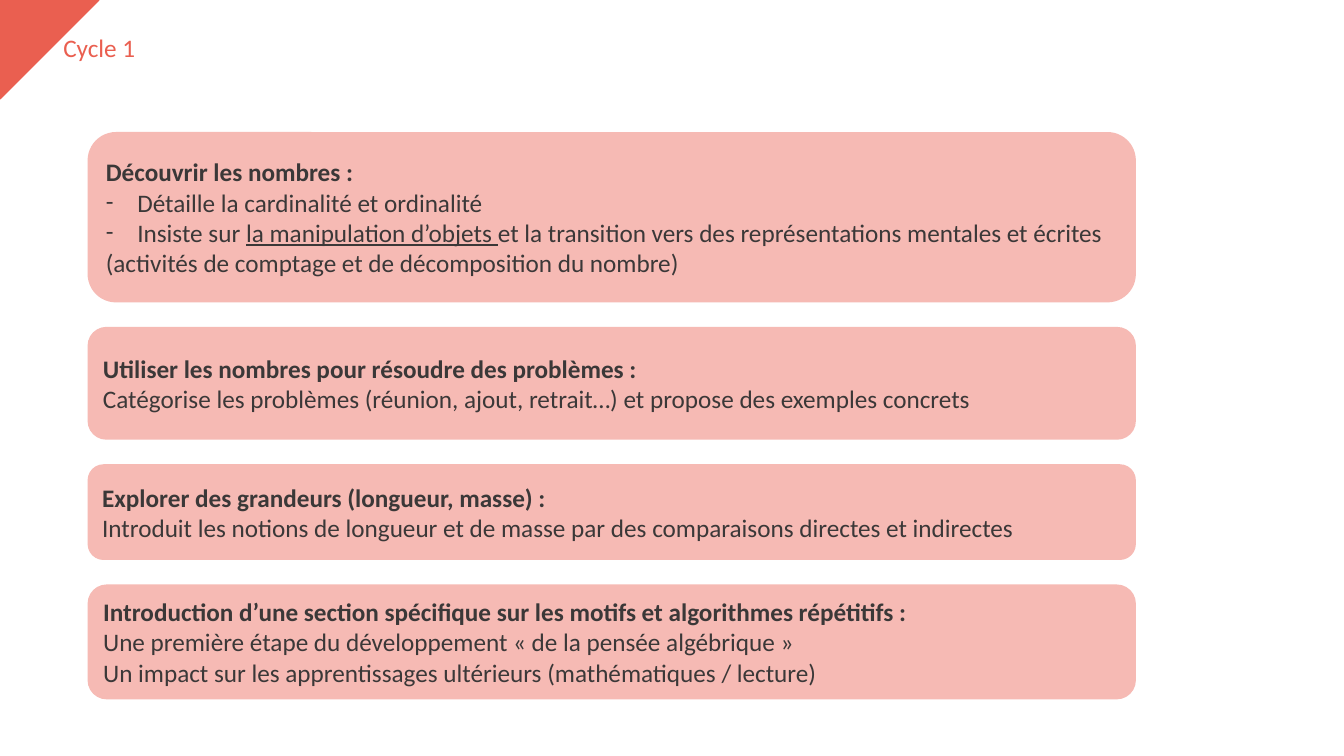
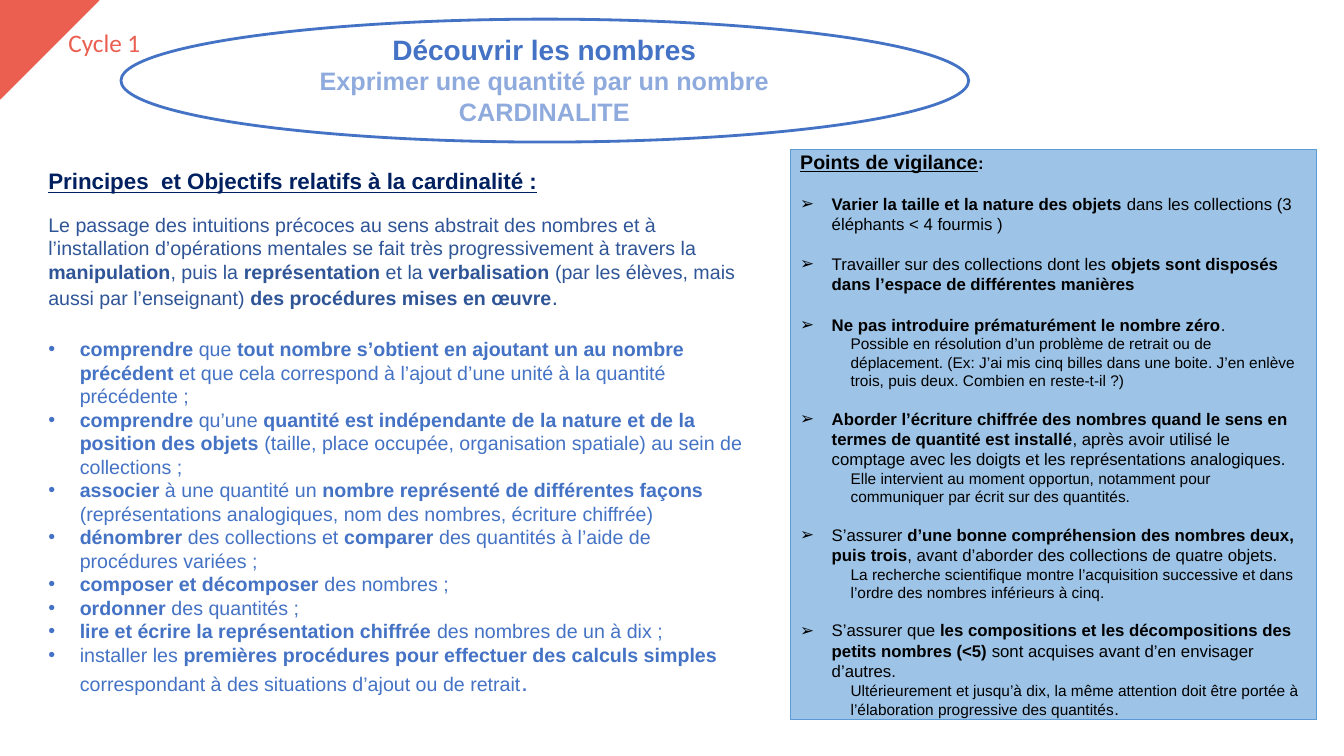
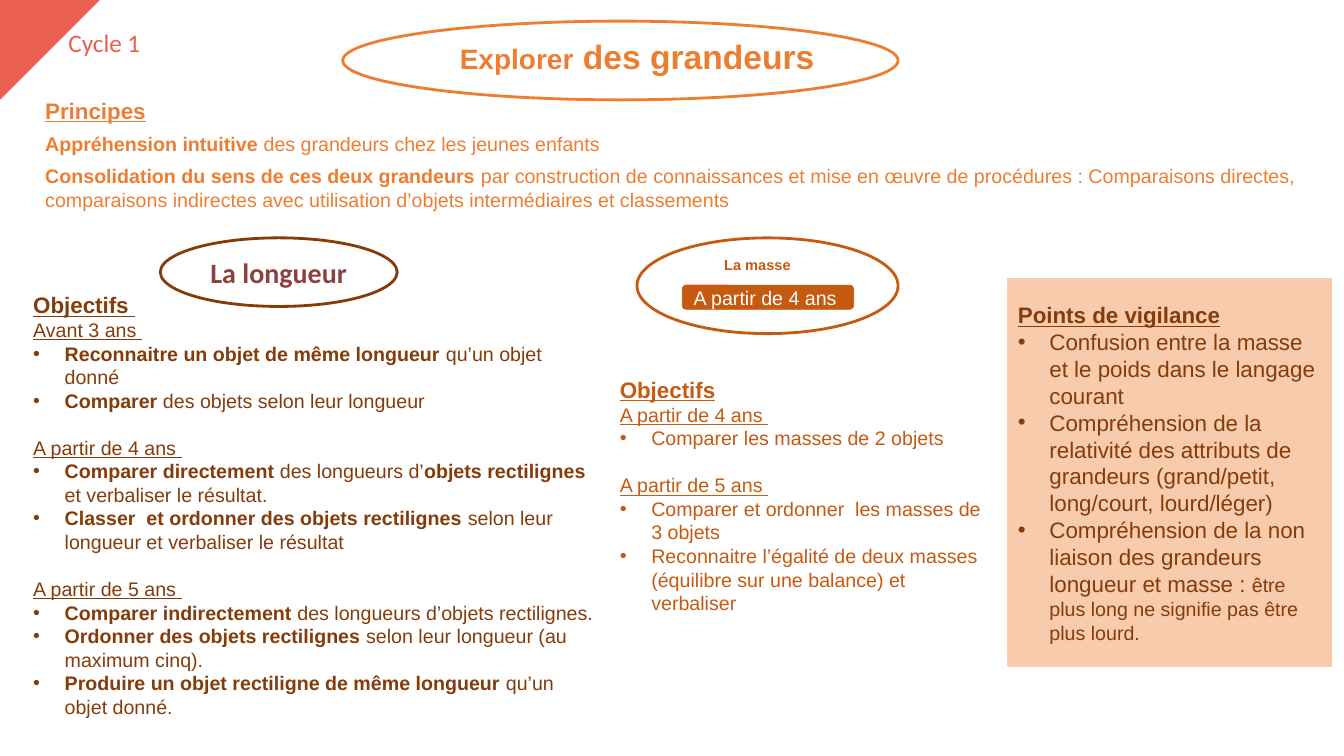
from lxml import etree
from pptx import Presentation
from pptx.dml.color import RGBColor
from pptx.enum.shapes import MSO_SHAPE
from pptx.enum.text import MSO_ANCHOR, MSO_AUTO_SIZE, PP_ALIGN
from pptx.oxml.ns import qn
from pptx.util import Pt

LEFT, CENTER = PP_ALIGN.LEFT, PP_ALIGN.CENTER
TOP, MIDDLE = MSO_ANCHOR.TOP, MSO_ANCHOR.MIDDLE
NO_FIT = MSO_AUTO_SIZE.NONE
RECTANGLE, ROUNDED = MSO_SHAPE.RECTANGLE, MSO_SHAPE.ROUNDED_RECTANGLE
ELLIPSE, TRIANGLE = MSO_SHAPE.OVAL, MSO_SHAPE.RIGHT_TRIANGLE
TITLE_ONLY, BLANK = 5, 6

COLORS = {
    "coral": "EA5F50", "pink": "F6BAB4", "charcoal": "3B3838",
    "navy": "002060", "dark_blue": "2F5597", "blue": "4472C4",
    "pale_blue": "8FAADC", "sky": "9DC3E6", "sky_line": "5B9BD5",
    "orange": "ED7D31", "rust": "C55A11", "brown": "843C0B",
    "wine": "8D413F", "peach": "F8CBAD", "black": "000000", "white": "FFFFFF",
}
BULLET_INDENT = 22.5


def color(name):
    return RGBColor.from_string(COLORS[name])


def add_spans(para, text, font="Arial", size=14, ink="black"):
    """Asterisks switch bold on and off, underscores switch underline."""
    for bold_index, part in enumerate(text.split("*")):
        for line_index, piece in enumerate(part.split("_")):
            if piece:
                span = para.add_run()
                span.text = piece
                span.font.name = font
                span.font.size = Pt(size)
                span.font.bold = bold_index % 2 == 1
                span.font.underline = line_index % 2 == 1
                span.font.color.rgb = color(ink)


def write_para(para, text, font="Arial", size=14, ink="black", align=LEFT, bullet=None,
               indent=0, before=0, after=0, tail="", tail_size=None):
    para.alignment = align
    para.space_before, para.space_after = Pt(before), Pt(after)
    add_spans(para, text, font, size, ink)
    add_spans(para, tail, font, tail_size or size, ink)
    properties = para._p.get_or_add_pPr()
    if bullet:
        properties.set("marL", str(Pt(BULLET_INDENT)))
        properties.set("indent", str(-Pt(BULLET_INDENT)))
        etree.SubElement(properties, qn("a:buFont")).set("typeface", font)
        etree.SubElement(properties, qn("a:buChar")).set("char", bullet)
    elif indent:
        properties.set("marL", str(Pt(indent)))
        properties.set("indent", "0")


def write_text(holder, paras, anchor=TOP, **shared):
    frame = holder.text_frame
    frame.word_wrap = True
    frame.auto_size = NO_FIT
    frame.vertical_anchor = anchor
    for index, (text, own) in enumerate(paras):
        para = frame.add_paragraph() if index else frame.paragraphs[0]
        write_para(para, text, **{**shared, **own})


def add_text(page, box, paras, **shared):
    write_text(page.shapes.add_textbox(*map(Pt, box)), paras, **shared)


def add_title(page, box, paras, **shared):
    title = page.shapes.title
    title.left, title.top, title.width, title.height = map(Pt, box)
    write_text(title, paras, **shared)


def add_panel(page, kind, box, fill=None, line=None, weight=1.0, paras=(), **shared):
    panel = page.shapes.add_shape(kind, *map(Pt, box))
    panel.shadow.inherit = False
    if fill:
        panel.fill.solid()
        panel.fill.fore_color.rgb = color(fill)
    else:
        panel.fill.background()
    if line:
        panel.line.color.rgb = color(line)
        panel.line.width = Pt(weight)
    else:
        panel.line.fill.background()
    write_text(panel, paras, anchor=MIDDLE, **shared)
    return panel


def add_corner(page, left, top, place=add_text):
    add_panel(page, TRIANGLE, (0, 0, 70.6, 70.6), "coral", "coral").rotation = 90
    place(page, (left, top, 78.5, 29), [("Cycle 1", {})],
          font="Calibri", size=18, ink="coral", align=CENTER)


def add_cards(page, left, top, width, gap, cards):
    for height, paras in cards:
        add_panel(page, ROUNDED, (left, top, width, height), "pink", paras=paras,
                  font="Calibri", size=18, ink="charcoal")
        top += height + gap


def build_overview(deck):
    page = deck.slides.add_slide(deck.slide_layouts[TITLE_ONLY])
    dash = {"bullet": "-"}
    add_cards(page, 62.6, 94.3, 748.8, 17.5, [
        (121.7, [
            ("*Découvrir les nombres :*", {}),
            ("Détaille la cardinalité et ordinalité", dash),
            ("Insiste sur _la manipulation d’objets _et la transition vers des "
             "représentations mentales et écrites", dash),
            ("(activités de comptage et de décomposition du nombre)", {}),
        ]),
        (80.6, [
            ("*Utiliser les nombres pour résoudre des problèmes :*", {}),
            ("Catégorise les problèmes (réunion, ajout, retrait…) et propose des "
             "exemples concrets", {}),
        ]),
        (68.4, [
            ("*Explorer des grandeurs (longueur, masse) :*", {}),
            ("Introduit les notions de longueur et de masse par des comparaisons "
             "directes et indirectes", {}),
        ]),
        (82.1, [
            ("*Introduction d’une section spécifique sur les motifs et algorithmes "
             "répétitifs :*", {}),
            ("Une première étape du développement « de la pensée algébrique »", {}),
            ("Un impact sur les apprentissages ultérieurs (mathématiques / lecture)", {}),
        ]),
    ])
    add_corner(page, 31.7, 19.4, add_title)


def add_cardinality_goals(page, left, top, width):
    dot = {"bullet": "•", "ink": "blue"}
    add_text(page, (left, top, width, 29),
             [("*_Principes  et Objectifs relatifs à la cardinalité :_*", {})],
             size=16, ink="navy")
    add_text(page, (left, top + 32.4, width, 353.5), [
        ("Le passage des intuitions précoces au sens abstrait des nombres et à "
         "l’installation d’opérations mentales se fait très progressivement à travers la "
         "*manipulation*, puis la *représentation* et la *verbalisation* (par les élèves, "
         "mais aussi par l’enseignant) *des procédures mises en œuvre*",
         {"tail": ".", "tail_size": 16}),
        ("*comprendre *que *tout nombre s’obtient en ajoutant un au nombre précédent* et "
         "que cela correspond à l’ajout d’une unité à la quantité précédente ;",
         {**dot, "before": 19.2}),
        ("*comprendre* qu’une *quantité est indépendante de la nature et de la position "
         "des objets* (taille, place occupée, organisation spatiale) au sein de "
         "collections ;", dot),
        ("*associer* à une quantité un *nombre représenté de différentes façons "
         "*(représentations analogiques, nom des nombres, écriture chiffrée)", dot),
        ("*dénombrer *des collections et *comparer* des quantités à l’aide de procédures "
         "variées ;", dot),
        ("*composer et décomposer *des nombres ;", dot),
        ("*ordonner *des quantités ;", dot),
        ("*lire et écrire la représentation chiffrée *des nombres de un à dix ;", dot),
        ("installer les *premières procédures pour effectuer des calculs simples "
         "*correspondant à des situations d’ajout ou de retrait",
         {**dot, "tail": ".", "tail_size": 18}),
    ], ink="dark_blue")


def add_cardinality_warnings(page, box):
    arrow = {"bullet": "➢", "before": 14.4}
    later_arrow = {**arrow, "before": 13.2}
    detail = {"indent": 36, "size": 11}
    add_panel(page, RECTANGLE, box, "sky", "sky_line", 0.5, [
        ("*_Points de vigilance_*", {"size": 14, "tail": "*:*", "tail_size": 12}),
        ("*Varier la taille et la nature des objets *dans les collections (3 éléphants "
         "< 4 fourmis )", arrow),
        ("Travailler sur des collections dont les *objets sont disposés dans l’espace de "
         "différentes manières*", arrow),
        ("*Ne pas introduire prématurément le nombre zéro*.", arrow),
        ("Possible en résolution d’un problème de retrait ou de déplacement. (Ex: J’ai "
         "mis cinq billes dans une boite. J’en enlève trois, puis deux. Combien en "
         "reste-t-il ?)", detail),
        ("*Aborder l’écriture chiffrée des nombres quand le sens en termes de quantité "
         "est installé*, après avoir utilisé le comptage avec les doigts et les "
         "représentations analogiques.", later_arrow),
        ("Elle intervient au moment opportun, notamment pour communiquer par écrit sur "
         "des quantités.", detail),
        ("S’assurer *d’une bonne compréhension des nombres deux, puis trois*, avant "
         "d’aborder des collections de quatre objets.", later_arrow),
        ("La recherche scientifique montre l’acquisition successive et dans l’ordre des "
         "nombres inférieurs à cinq.", detail),
        ("S’assurer que *les compositions et les décompositions des petits nombres (<5)* "
         "sont acquises avant d’en envisager d’autres.", later_arrow),
        ("Ultérieurement et jusqu’à dix, la même attention doit être portée à "
         "l’élaboration progressive des quantités",
         {**detail, "tail": ".", "tail_size": 12}),
    ], size=12)


def build_cardinality(deck):
    page = deck.slides.add_slide(deck.slide_layouts[TITLE_ONLY])
    add_title(page, (70.6, 19.4, 636.5, 76.3), [
        ("*Découvrir les nombres*", {"size": 20, "ink": "blue"}),
        ("*Exprimer une quantité par un nombre*", {}),
        ("*CARDINALITE*", {}),
    ], size=18, ink="pale_blue", align=CENTER)
    add_panel(page, ELLIPSE, (86.4, 13.7, 605.5, 87.8), line="blue", weight=2)
    add_cardinality_goals(page, 27.4, 115.9, 513.4)
    add_cardinality_warnings(page, (564.5, 106.6, 375.8, 407.5))
    add_corner(page, 35.3, 15.8)


def add_goals(page, box, ink, stages):
    paras = []
    for heading, goals in stages:
        gap = 16.8 if len(paras) > 1 else 0
        if not paras:
            paras.append((heading, {"size": 16}))
            continue
        paras.append((heading, {"before": gap}))
        paras += [(goal, {"bullet": "•"}) for goal in goals]
    add_text(page, box, paras, ink=ink)


def add_length(page, left, top):
    add_panel(page, ELLIPSE, (left + 97.9, top, 169.2, 49), line="brown", weight=2,
              paras=[("*La longueur*", {})],
              font="Calibri", size=20, ink="wine", align=CENTER)
    add_goals(page, (left, top + 34.6, 416.2, 315.4), "brown", [
        ("*_Objectifs _*", []),
        ("_Avant 3 ans _", [
            "*Reconnaitre un objet de même longueur *qu’un objet donné",
            "*Comparer *des objets selon leur longueur",
        ]),
        ("_A partir de 4 ans _", [
            "*Comparer directement *des longueurs d’*objets rectilignes *et verbaliser "
            "le résultat.",
            "*Classer  et ordonner des objets rectilignes *selon leur longueur et "
            "verbaliser le résultat",
        ]),
        ("_A partir de 5 ans _", [
            "*Comparer indirectement *des longueurs d’objets rectilignes.",
            "*Ordonner des objets rectilignes *selon leur longueur (au maximum cinq).",
            "*Produire un objet rectiligne de même longueur *qu’un objet donné.",
        ]),
    ])


def add_mass(page, left, top):
    add_text(page, (left + 51.8, top + 9.4, 107.3, 26.6), [("*La masse*", {})],
             size=10.4, ink="rust", align=CENTER)
    add_panel(page, ROUNDED, (left + 51.8, top + 33.8, 122.4, 17.3), "rust", "rust", 0.5,
              [("A partir de 4 ans ", {})], ink="white", align=CENTER)
    add_panel(page, ELLIPSE, (left + 19.4, top, 186.5, 68.4), line="rust", weight=2)
    add_goals(page, (left, top + 95, 279.4, 179.3), "rust", [
        ("*_Objectifs_*", []),
        ("_A partir de 4 ans _", ["Comparer les masses de 2 objets"]),
        ("_A partir de 5 ans _", [
            "Comparer et ordonner  les masses de 3 objets",
            "Reconnaitre l’égalité de deux masses (équilibre sur une balance) et "
            "verbaliser",
        ]),
    ])


def add_measure_warnings(page, box):
    dot = {"bullet": "•"}
    add_panel(page, RECTANGLE, box, "peach", "peach", 1, [
        ("*_Points de vigilance_*", {}),
        ("Confusion entre la masse et le poids dans le langage courant", dot),
        ("Compréhension de la relativité des attributs de grandeurs (grand/petit, "
         "long/court, lourd/léger)", dot),
        ("Compréhension de la non liaison des grandeurs longueur et masse : ",
         {**dot, "tail": "être plus long ne signifie pas être plus lourd.",
          "tail_size": 14}),
    ], size=16, ink="brown")


def build_measures(deck):
    page = deck.slides.add_slide(deck.slide_layouts[TITLE_ONLY])
    add_title(page, (304.6, 22.3, 301, 33.1),
              [("*Explorer*", {"tail": "* des grandeurs*", "tail_size": 24})],
              size=20, ink="orange", align=CENTER)
    add_panel(page, ELLIPSE, (244.8, 15.1, 396.7, 56.2), line="orange", weight=2)
    add_text(page, (25.2, 65.5, 934.6, 95), [
        ("*_Principes_*", {"size": 16}),
        ("*Appréhension intuitive *des grandeurs chez les jeunes enfants", {}),
        ("*Consolidation du sens de ces deux grandeurs *par construction de connaissances "
         "et mise en œuvre de procédures : Comparaisons directes, comparaisons indirectes "
         "avec utilisation d’objets intermédiaires et classements", {}),
    ], ink="orange", after=6)
    add_length(page, 16.6, 169.9)
    add_mass(page, 435.6, 169.9)
    add_measure_warnings(page, (720, 199.4, 231.1, 276.5))
    add_corner(page, 35.3, 15.8)


def main():
    deck = Presentation()
    deck.slide_width, deck.slide_height = Pt(960), Pt(540)
    for build in (build_overview, build_cardinality, build_measures):
        build(deck)
    deck.save("out.pptx")


if __name__ == "__main__":
    main()
